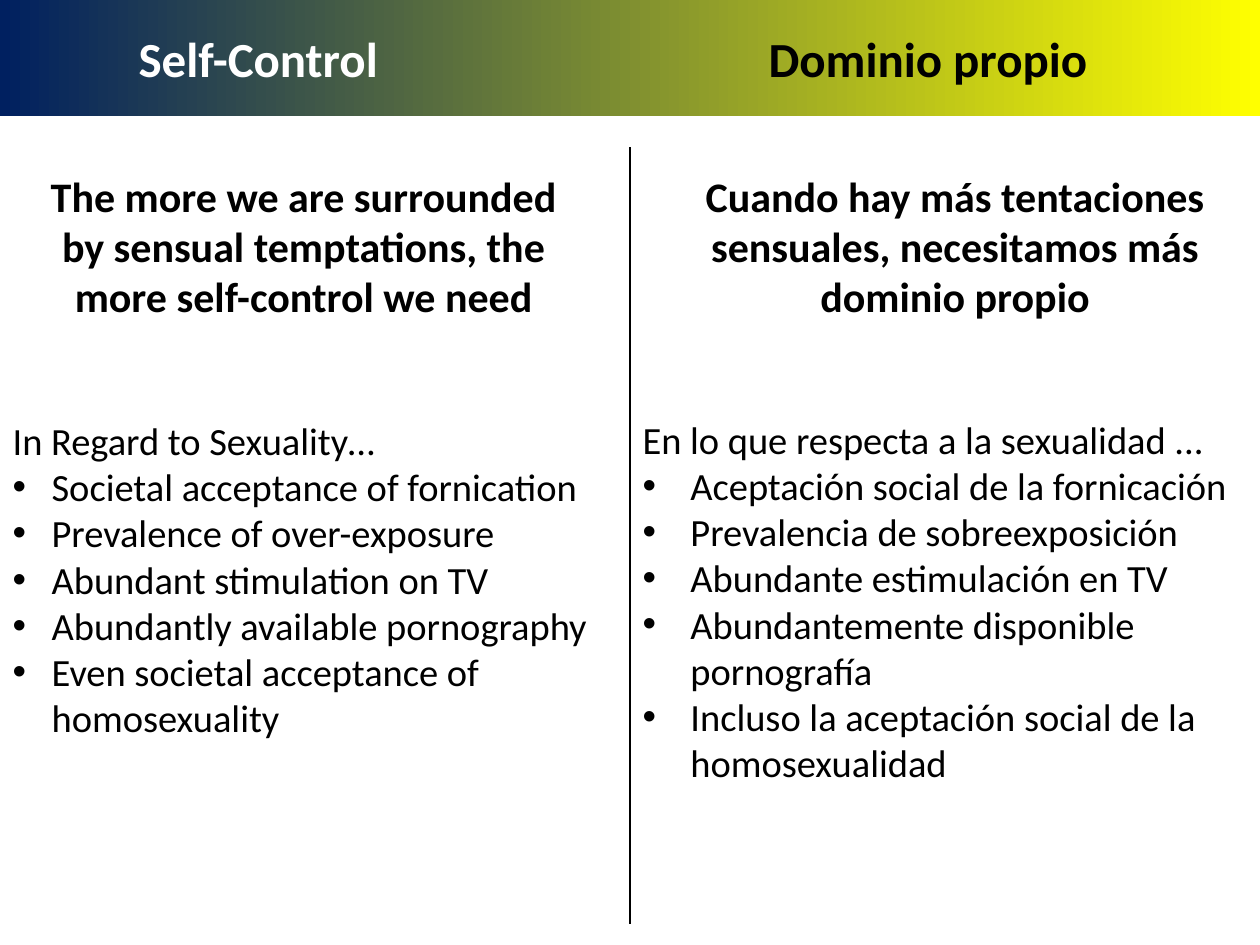
from lxml.etree import SubElement
from pptx import Presentation
from pptx.dml.color import RGBColor
from pptx.enum.shapes import MSO_CONNECTOR
from pptx.enum.text import MSO_ANCHOR, MSO_AUTO_SIZE, PP_ALIGN
from pptx.oxml.ns import qn
from pptx.util import Inches, Pt

COLORS = {"navy": "002060", "yellow": "FFFF00", "white": "FFFFFF", "black": "000000"}
FONT = "Calibri"
TWO_CONTENT_LAYOUT = 3

# One entry per language: slogan and list boxes as left, top, width, height
COLUMNS = [
    {
        "slogan": "The more we are surrounded by sensual temptations, "
                  "the more self-control we need",
        "slogan_box": (0.23, 1.3, 4.36, 1.31),
        "intro": "In Regard to Sexuality…",
        "points": [
            "Societal acceptance of fornication",
            "Prevalence of over-exposure",
            "Abundant stimulation on TV",
            "Abundantly available pornography",
            "Even societal acceptance of homosexuality",
        ],
        "list_box": (0, 3.26, 5.01, 3.06),
        "indent": 0.31,
    },
    {
        "slogan": "Cuando hay más tentaciones sensuales, necesitamos más dominio propio",
        "slogan_box": (5.33, 1.3, 4.5, 1.31),
        "intro": "En lo que respecta a la sexualidad ...",
        "points": [
            "Aceptación social de la fornicación",
            "Prevalencia de sobreexposición",
            "Abundante estimulación en TV",
            "Abundantemente disponible pornografía",
            "Incluso la aceptación social de la homosexualidad",
        ],
        "list_box": (5, 3.25, 5, 3.06),
        "indent": 0.38,
    },
]


def rgb(name):
    return RGBColor.from_string(COLORS[name])


def write(paragraph, text, size, color="black", bold=False, align=PP_ALIGN.LEFT):
    """Append a formatted run to a paragraph."""
    paragraph.alignment = align
    paragraph.space_before = Pt(0)
    run = paragraph.add_run()
    run.text = text
    run.font.name = FONT
    run.font.size = Pt(size)
    run.font.bold = bold
    run.font.color.rgb = rgb(color)


def place(shape, box):
    shape.left, shape.top, shape.width, shape.height = map(Inches, box)


def set_bullet(paragraph, indent):
    """Give a hanging bullet, or none when the indent is zero."""
    props = paragraph._p.get_or_add_pPr()
    props.set("marL", str(Inches(indent)))
    props.set("indent", str(-Inches(indent)))
    if indent:
        SubElement(props, qn("a:buFont"), typeface="Arial")
        SubElement(props, qn("a:buChar"), char="•")
    else:
        SubElement(props, qn("a:buNone"))


def set_tab_stops(paragraph, stops):
    tab_list = SubElement(paragraph._p.get_or_add_pPr(), qn("a:tabLst"))
    for stop in stops:
        SubElement(tab_list, qn("a:tab"), pos=str(Inches(stop)), algn="l")


def fill_heading(heading):
    """Gradient band holding the title in both languages."""
    place(heading, (0, 0, 10, 0.92))
    heading.fill.gradient()
    heading.fill.gradient_angle = 0
    for stop, color in zip(heading.fill.gradient_stops, ("navy", "yellow")):
        stop.color.rgb = rgb(color)
    frame = heading.text_frame
    frame.auto_size = MSO_AUTO_SIZE.NONE
    frame.vertical_anchor = MSO_ANCHOR.MIDDLE
    titles = frame.paragraphs[0]
    write(titles, "\tSelf-Control", 28, color="white", bold=True)
    write(titles, "\tDominio propio", 28, bold=True)
    set_tab_stops(titles, (1, 6))


def add_divider(slide):
    divider = slide.shapes.add_connector(
        MSO_CONNECTOR.STRAIGHT, Inches(5), Inches(1.17), Inches(5), Inches(7.33))
    divider.line.color.rgb = rgb("black")
    divider.line.width = Pt(1)
    SubElement(divider._element.spPr, qn("a:effectLst"))


def add_slogan(slide, text, box):
    slogan = slide.shapes.add_textbox(*map(Inches, box))
    slogan.text_frame.word_wrap = True
    write(slogan.text_frame.paragraphs[0], text, 24, bold=True, align=PP_ALIGN.CENTER)


def fill_list(body, column):
    """Intro line followed by bulleted points."""
    place(body, column["list_box"])
    frame = body.text_frame
    frame.auto_size = MSO_AUTO_SIZE.NONE
    intro = frame.paragraphs[0]
    write(intro, column["intro"], 22)
    set_bullet(intro, 0)
    for text in column["points"]:
        point = frame.add_paragraph()
        write(point, text, 22)
        set_bullet(point, column["indent"])


def main():
    deck = Presentation()
    deck.slide_width, deck.slide_height = Inches(10), Inches(7.5)
    slide = deck.slides.add_slide(deck.slide_layouts[TWO_CONTENT_LAYOUT])

    # Heading band and centre line
    fill_heading(slide.shapes.title)
    add_divider(slide)

    # English and Spanish columns
    for number, column in enumerate(COLUMNS, start=1):
        add_slogan(slide, column["slogan"], column["slogan_box"])
        fill_list(slide.placeholders[number], column)

    deck.save("out.pptx")


if __name__ == "__main__":
    main()
